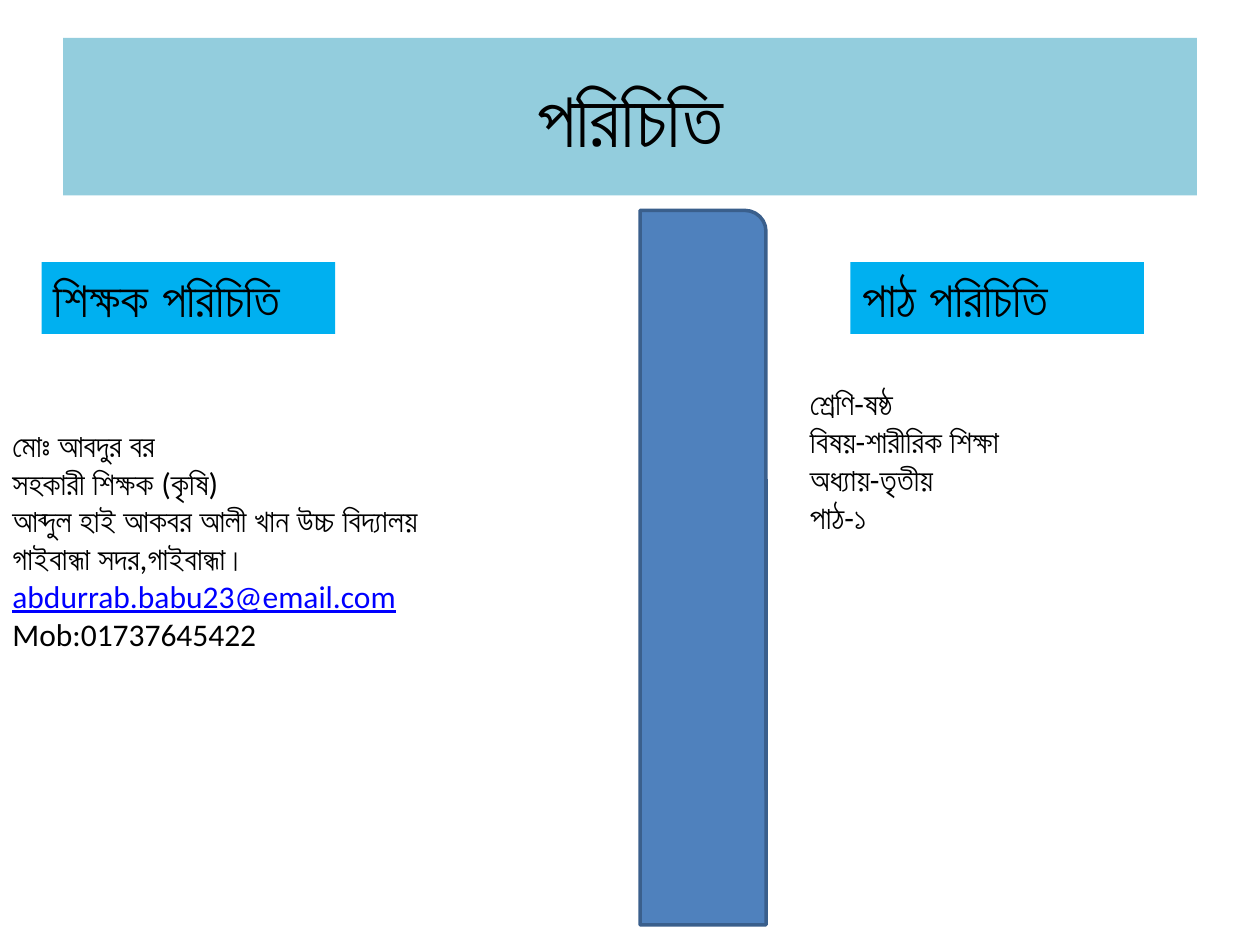
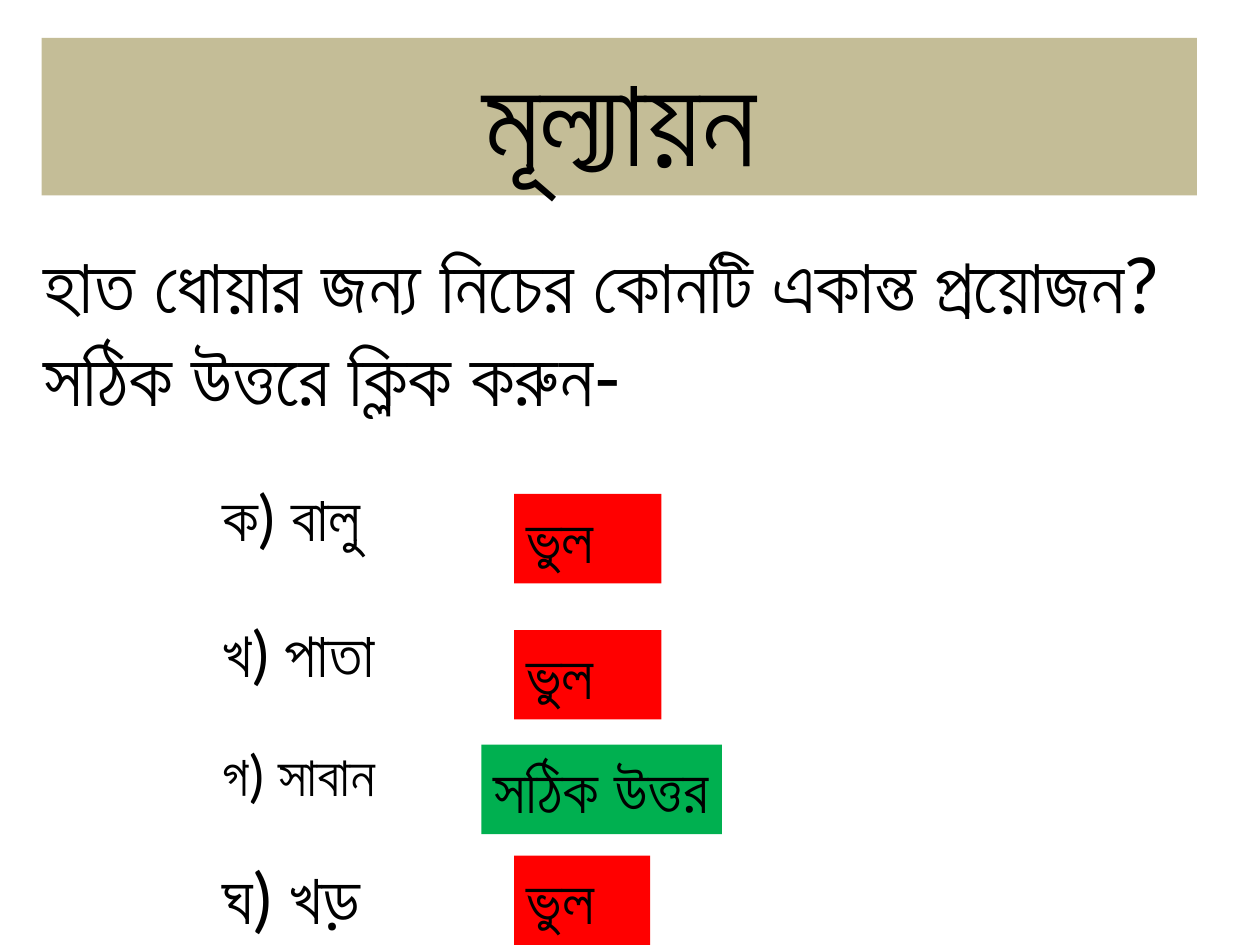
from pptx import Presentation
from pptx.dml.color import RGBColor
from pptx.enum.shapes import MSO_SHAPE
from pptx.enum.text import MSO_ANCHOR, MSO_AUTO_SIZE, PP_ALIGN
from pptx.util import Inches, Pt

BLACK = RGBColor(0, 0, 0)
LINK_BLUE = RGBColor(0, 0, 0xFF)
PALE_TEAL = RGBColor(0x93, 0xCD, 0xDD)
TAN = RGBColor(0xC4, 0xBD, 0x97)
SKY = RGBColor(0, 0xB0, 0xF0)
STEEL = RGBColor(0x4F, 0x81, 0xBD)
STEEL_EDGE = RGBColor(0x3A, 0x5F, 0x8C)
RED = RGBColor(0xFF, 0, 0)
GREEN = RGBColor(0, 0xB0, 0x50)

HEADING_FONT = "Lato"
BODY_FONT = "Calibri"
EMAIL = "abdurrab.babu23@email.com"
TEACHER = [
    "মোঃ আবদুর বর",
    "সহকারী শিক্ষক (কৃষি)",
    "আব্দুল হাই আকবর আলী খান উচ্চ বিদ্যালয়",
    "গাইবান্ধা সদর,গাইবান্ধা।",
    EMAIL,
    "Mob:01737645422",
]
LESSON = ["শ্রেণি-ষষ্ঠ", "বিষয়-শারীরিক শিক্ষা", "অধ্যায়-তৃতীয়", "পাঠ-১"]
QUESTION = ["হাত ধোয়ার জন্য নিচের কোনটি একান্ত প্রয়োজন?", "সঠিক উত্তরে ক্লিক করুন-"]
WRONG = "ভুল"
RIGHT = "সঠিক উত্তর"


def style(para, size, font=HEADING_FONT, bold=False):
    para.font.name = font
    para.font.size = Pt(size)
    para.font.bold = bold
    para.font.color.rgb = BLACK


def add_titled_page(deck, title, box, fill, size, bold=False):
    page = deck.slides.add_slide(deck.slide_layouts[5])
    band = page.shapes.title
    band.left, band.top, band.width, band.height = map(Inches, box)
    band.fill.solid()
    band.fill.fore_color.rgb = fill
    frame = band.text_frame
    frame.text = title
    frame.auto_size = MSO_AUTO_SIZE.NONE
    frame.vertical_anchor = MSO_ANCHOR.MIDDLE
    frame.paragraphs[0].alignment = PP_ALIGN.CENTER
    style(frame.paragraphs[0], size, bold=bold)
    return page


def add_text(page, lines, box, size, font=HEADING_FONT, bold=False, fill=None, wrap=True):
    label = page.shapes.add_textbox(*map(Inches, box))
    if fill is not None:
        label.fill.solid()
        label.fill.fore_color.rgb = fill
    frame = label.text_frame
    frame.word_wrap = wrap
    frame.auto_size = MSO_AUTO_SIZE.SHAPE_TO_FIT_TEXT
    for index, line in enumerate(lines):
        para = frame.paragraphs[0] if index == 0 else frame.add_paragraph()
        span = para.add_run()
        span.text = line
        style(para, size, font, bold)
        if line == EMAIL:
            span.font.color.rgb = LINK_BLUE
            span.font.underline = True


def add_profile(page, heading, lines, left, top, heading_offset, text_offset, text_size):
    add_text(page, [heading], (left + heading_offset, top, 2.33, 0.57), 28, bold=True, fill=SKY)
    add_text(page, lines, (left, top + text_offset, *text_size), 18, BODY_FONT)


def add_divider(page, box):
    divider = page.shapes.add_shape(MSO_SHAPE.ROUND_1_RECTANGLE, *map(Inches, box))
    divider.shadow.inherit = False
    divider.fill.solid()
    divider.fill.fore_color.rgb = STEEL
    divider.line.color.rgb = STEEL_EDGE
    divider.line.width = Pt(2)


def add_choice(page, left, top, choice, width, size, wrap, verdict, verdict_box):
    add_text(page, [choice], (left, top, width, size / 50), size, wrap=wrap)
    offset_x, offset_y, verdict_width = verdict_box
    correct = verdict == RIGHT
    add_text(page, [verdict], (left + offset_x, top + offset_y, verdict_width, 0.71), 36,
             fill=GREEN if correct else RED, wrap=not correct)


def build_introduction(deck):
    page = add_titled_page(deck, "পরিচিতি", (0.5, 0.3, 9, 1.25), PALE_TEAL, 44, bold=True)
    add_divider(page, (5.08, 1.67, 1, 5.67))
    add_profile(page, "শিক্ষক পরিচিতি", TEACHER, 0, 2.08, 0.33, 1.25, (4.75, 2.22))
    add_profile(page, "পাঠ পরিচিতি", LESSON, 6.33, 2.08, 0.42, 0.92, (3.5, 1.62))


def build_evaluation(deck):
    page = add_titled_page(deck, "মূল্যায়ন", (0.33, 0.3, 9.17, 1.25), TAN, 72)
    add_text(page, QUESTION, (0.25, 1.83, 9.33, 1.58), 44)
    choices = [
        (3.75, "ক) বালু", 1.37, 36, False, WRONG, (2.41, 0.17, 1.17)),
        (4.83, "খ) পাতা", 1.48, 36, False, WRONG, (2.41, 0.17, 1.17)),
        (5.83, "গ) সাবান", 1.55, 32, True, RIGHT, (2.15, 0.08, 1.91)),
        (6.73, "ঘ) খড়", 1.42, 40, True, WRONG, (2.41, 0.06, 1.08)),
    ]
    for choice in choices:
        add_choice(page, 1.67, *choice)


def main():
    deck = Presentation()
    deck.slide_width, deck.slide_height = Inches(10), Inches(7.5)
    build_introduction(deck)
    build_evaluation(deck)
    deck.save("out.pptx")


if __name__ == "__main__":
    main()
